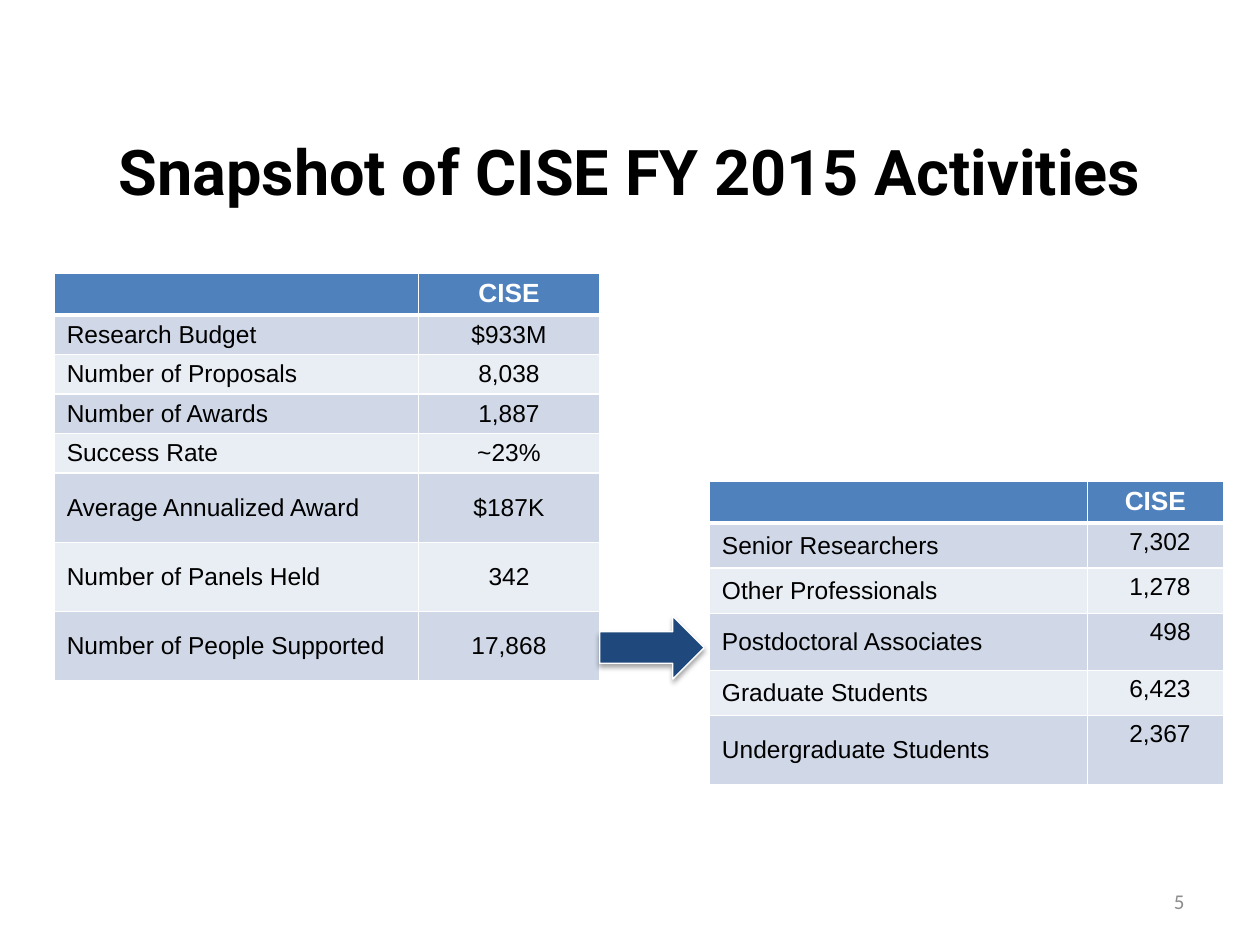
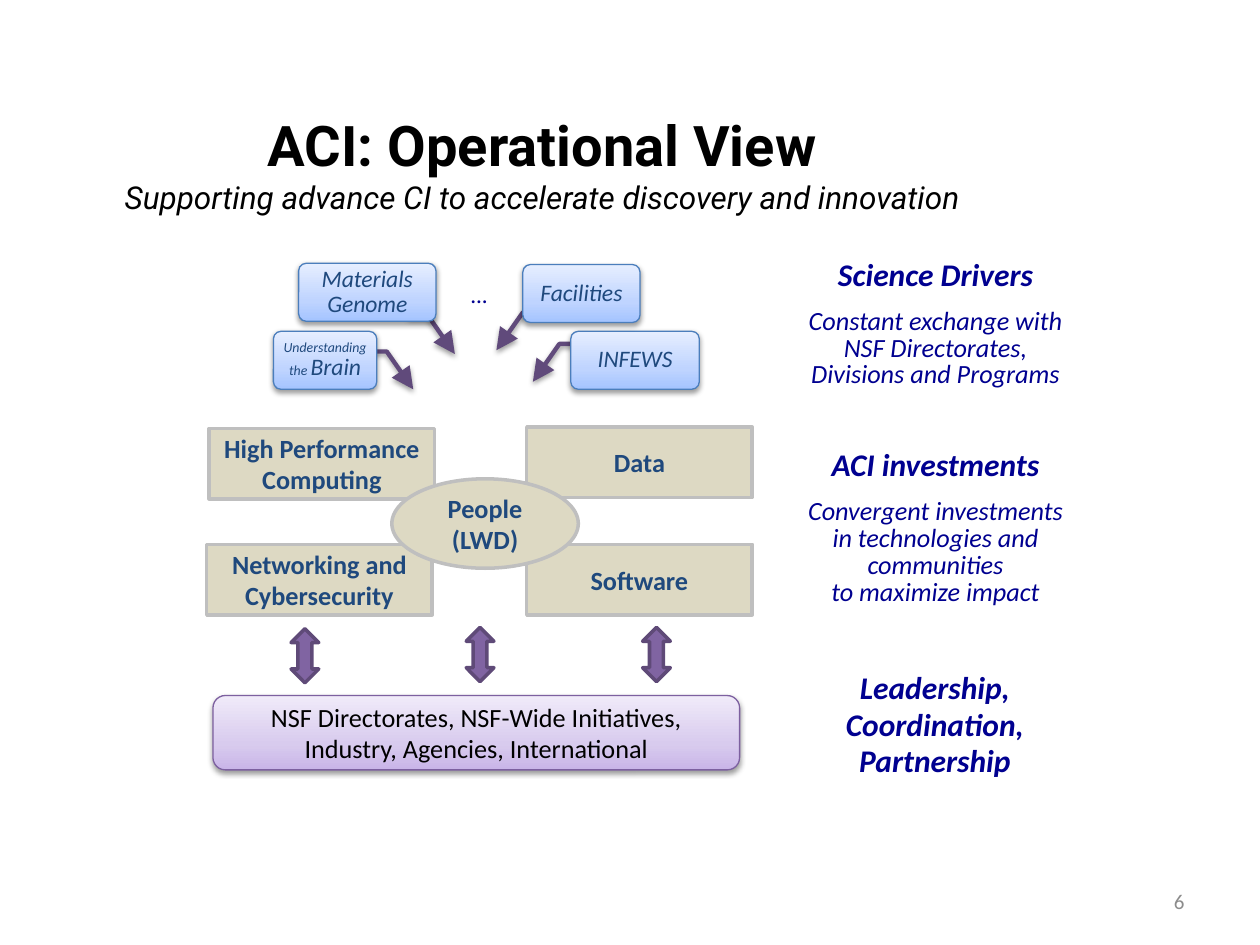
from copy import deepcopy

from lxml import etree
from pptx import Presentation
from pptx.dml.color import RGBColor
from pptx.enum.shapes import MSO_SHAPE
from pptx.enum.text import MSO_ANCHOR, MSO_AUTO_SIZE, PP_ALIGN
from pptx.oxml.ns import qn
from pptx.util import Pt

PX = 9144
SLIDE_WIDTH, SLIDE_HEIGHT = 1000, 750
TITLE_ONLY = 5

LEFT, CENTER, RIGHT = PP_ALIGN.LEFT, PP_ALIGN.CENTER, PP_ALIGN.RIGHT
TOP, MIDDLE = MSO_ANCHOR.TOP, MSO_ANCHOR.MIDDLE
NO_AUTOFIT = MSO_AUTO_SIZE.NONE
RECTANGLE, ROUNDED, OVAL = MSO_SHAPE.RECTANGLE, MSO_SHAPE.ROUNDED_RECTANGLE, MSO_SHAPE.OVAL
RIGHT_ARROW, UP_DOWN_ARROW = MSO_SHAPE.RIGHT_ARROW, MSO_SHAPE.UP_DOWN_ARROW

BLACK = RGBColor(0x00, 0x00, 0x00)
WHITE = RGBColor(0xFF, 0xFF, 0xFF)
GRAY = RGBColor(0x8C, 0x8C, 0x8C)
HEADER_BLUE = RGBColor(0x4F, 0x81, 0xBD)
BANDS = (RGBColor(0xD0, 0xD8, 0xE8), RGBColor(0xE9, 0xED, 0xF4))
NAVY = RGBColor(0x1F, 0x49, 0x7D)
DEEP_BLUE = RGBColor(0x00, 0x00, 0x90)
DRIVER_EDGE = RGBColor(0x4B, 0x7E, 0xBC)
DRIVER_FADE = ((0, "A4C4FF"), (35, "BFD4FF"), (100, "E6EEFF"))
PARTNER_EDGE = RGBColor(0x7D, 0x60, 0xA0)
PARTNER_FADE = ((0, "C9B5E8"), (35, "D8CBEE"), (100, "F0EAF9"))
PURPLE = RGBColor(0x80, 0x64, 0xA2)
DARK_PURPLE = RGBColor(0x5F, 0x4A, 0x78)
BENT_PURPLE = RGBColor(0x60, 0x4A, 0x7B)
TAN = RGBColor(0xDD, 0xD9, 0xC3)
SILVER = RGBColor(0xBF, 0xBF, 0xBF)

ACTIVITIES = (
    ("Research Budget", "$933M"),
    ("Number of Proposals", "8,038"),
    ("Number of Awards", "1,887"),
    ("Success Rate", "~23%"),
    ("Average Annualized Award", "$187K"),
    ("Number of Panels Held", "342"),
    ("Number of People Supported", "17,868"),
)
PEOPLE = (
    ("Senior Researchers", "7,302"),
    ("Other Professionals", "1,278"),
    ("Postdoctoral Associates", "498"),
    ("Graduate Students", "6,423"),
    ("Undergraduate Students", "2,367"),
)
DRIVERS = (
    ((453, 263, 102, 46), "INFEWS"),
    ((415, 210, 93, 46), "Facilities"),
    ((237, 209, 109, 46), "Materials Genome"),
    ((217, 263, 82, 46), (("Understanding the ", {"size": 7.9}), ("Brain", {}))),
)
DRIVER_ARROWS = ((291, 279, 1), (460, 273, -1), (431, 248, -1), (324, 251, 1))
INVESTMENTS = (
    ((166, 340), "High Performance\nComputing"),
    ((418, 339), "Data"),
    ((164, 432), "Networking and\nCybersecurity"),
    ((418, 432), "Software"),
)
EXCHANGE_ARROWS = ((231, 499), (370, 498), (510, 498))


def emu(box):
    """Turn px lengths into EMU."""
    return [length * PX for length in box]


def write(frame, *paragraphs, size=15, font="Calibri", color=BLACK, bold=False, italic=False,
          align=CENTER, anchor=MIDDLE, line=None, before=None, wrap=True):
    """Fill a text frame; a paragraph is a string or (text, changes) pairs."""
    frame.word_wrap = wrap
    frame.vertical_anchor = anchor
    for index, content in enumerate(paragraphs):
        paragraph = frame.paragraphs[0] if index == 0 else frame.add_paragraph()
        paragraph.alignment = align
        if line is not None:
            paragraph.line_spacing = line
        if before is not None:
            paragraph.space_before = Pt(before)
        for text, changes in ((content, {}),) if isinstance(content, str) else content:
            look = {"size": size, "bold": bold, "italic": italic, **changes}
            for row, words in enumerate(text.split("\n")):
                if row:
                    line_break = paragraph._p.add_br()
                    line_break.append(deepcopy(run._r.rPr))
                if not words:
                    continue
                run = paragraph.add_run()
                run.text = words
                run.font.name = font
                run.font.size = Pt(look["size"])
                run.font.bold = look["bold"]
                run.font.italic = look["italic"]
                run.font.color.rgb = color


def add_text(slide, box, *paragraphs, **look):
    """Add a text box."""
    write(slide.shapes.add_textbox(*emu(box)).text_frame, *paragraphs, **look)


def add_slide(deck, number, title_box, *title, **look):
    """Add a slide with its title and number."""
    slide = deck.slides.add_slide(deck.slide_layouts[TITLE_ONLY])
    heading = slide.shapes.title
    heading.left, heading.top, heading.width, heading.height = emu(title_box)
    heading.text_frame.auto_size = NO_AUTOFIT
    write(heading.text_frame, *title, font="Roboto", bold=True, **look)
    add_text(slide, (717, 695, 233, 40), str(number), size=12, color=GRAY, align=RIGHT)
    return slide


def cast_shadow(shape, distance=1.6, opacity=38):
    """Give a shape a soft shadow straight below it."""
    effects = shape._element.spPr.find(qn("a:effectLst"))
    shadow = etree.SubElement(effects, qn("a:outerShdw"), blurRad=str(Pt(3.1)),
                              dist=str(Pt(distance)), dir="5400000", rotWithShape="0")
    black = etree.SubElement(shadow, qn("a:srgbClr"), val="000000")
    etree.SubElement(black, qn("a:alpha"), val=str(opacity * 1000))


def fade(shape, stops):
    """Fill a shape with a gradient that rises from the bottom."""
    shape.fill.gradient()
    shape.fill.gradient_angle = 90
    stop_list = shape._element.spPr.find(".//" + qn("a:gsLst"))
    stop_list.clear()
    for position, color in stops:
        stop = etree.SubElement(stop_list, qn("a:gs"), pos=str(position * 1000))
        etree.SubElement(stop, qn("a:srgbClr"), val=color)


def add_block(slide, kind, box, fill, edge, weight):
    """Add a preset shape; a tuple fill holds gradient stops."""
    block = slide.shapes.add_shape(kind, *emu(box))
    if isinstance(fill, RGBColor):
        block.fill.solid()
        block.fill.fore_color.rgb = fill
    else:
        fade(block, fill)
    block.line.color.rgb = edge
    block.line.width = Pt(weight)
    block.shadow.inherit = False
    return block


def add_bent_arrow(slide, x, y, side):
    """Add an arrow that runs level, then down to the given side."""
    builder = slide.shapes.build_freeform(x, y, scale=PX)
    builder.add_line_segments([(x + 16 * side, y), (x + 37 * side, y + 30)], close=False)
    arrow = builder.convert_to_shape()
    arrow.fill.background()
    arrow.line.color.rgb = BENT_PURPLE
    arrow.line.width = Pt(2.5)
    etree.SubElement(arrow._element.spPr.find(qn("a:ln")), qn("a:tailEnd"),
                     type="triangle", w="lg", len="lg")
    arrow.shadow.inherit = False
    cast_shadow(arrow)


def style_cell(cell, fill, bottom=1):
    """Set a cell's margins, white borders and fill."""
    cell.margin_left = cell.margin_right = 10 * PX
    cell.margin_top = cell.margin_bottom = 4 * PX
    properties = cell._tc.get_or_add_tcPr()
    for side, weight in (("L", 1), ("R", 1), ("T", 1), ("B", bottom)):
        border = etree.SubElement(properties, qn("a:ln" + side), w=str(Pt(weight)))
        paint = etree.SubElement(border, qn("a:solidFill"))
        etree.SubElement(paint, qn("a:srgbClr"), val=str(WHITE))
    cell.fill.solid()
    cell.fill.fore_color.rgb = fill


def add_figures(slide, left, top, widths, heights, rows, value_margin=10, **value_look):
    """Add a table of labels and CISE figures."""
    box = emu((left, top, sum(widths), sum(heights)))
    table = slide.shapes.add_table(len(heights), len(widths), *box).table
    for column, width in zip(table.columns, widths):
        column.width = width * PX
    for row, height in zip(table.rows, heights):
        row.height = height * PX
    corner, heading = table.cell(0, 0), table.cell(0, 1)
    for cell in (corner, heading):
        style_cell(cell, HEADER_BLUE, bottom=3)
    corner.text_frame.paragraphs[0]._p.get_or_add_endParaRPr().set("sz", "1500")
    write_cell(heading, "CISE", size=15, color=WHITE, bold=True, anchor=TOP)
    for index, (label, value) in enumerate(rows):
        label_cell, value_cell = table.cell(index + 1, 0), table.cell(index + 1, 1)
        for cell in (label_cell, value_cell):
            style_cell(cell, BANDS[index % 2])
        write_cell(label_cell, label, align=LEFT)
        write_cell(value_cell, value, **value_look)
        value_cell.margin_right = value_margin * PX


def write_cell(cell, text, anchor=MIDDLE, size=14, **look):
    """Write Arial text into a table cell."""
    write(cell.text_frame, text, font="Arial", size=size, **look)
    cell.vertical_anchor = anchor


def build_snapshot(deck):
    """Build the slide of yearly figures."""
    slide = add_slide(deck, 5, (50, 88, 900, 94), "Snapshot of CISE FY 2015 Activities", size=36)
    add_figures(slide, 563, 382, (300, 108), (33, 36, 36, 45, 36, 55), PEOPLE,
                value_margin=26, align=RIGHT, anchor=TOP)
    add_figures(slide, 43, 217, (289, 144), (33, 31, 31, 31, 31, 55, 55, 55), ACTIVITIES)
    cast_shadow(add_block(slide, RIGHT_ARROW, (476, 489, 83, 50), NAVY, WHITE, 0.75), 1.8, 35)


def build_operations(deck):
    """Build the slide of drivers, investments and partners."""
    slide = add_slide(
        deck, 6, (73, 73, 715, 113),
        (("ACI: Operational View\n", {}),
         ("Supporting advance CI to accelerate discovery and innovation",
          {"size": 18, "bold": False, "italic": True})), size=32)

    partners = add_block(slide, ROUNDED, (169, 552, 418, 59), PARTNER_FADE, PARTNER_EDGE, 0.75)
    cast_shadow(partners)
    write(partners.text_frame,
          "NSF Directorates, NSF-Wide Initiatives,\nIndustry, Agencies, International")
    for x, y in EXCHANGE_ARROWS:
        add_block(slide, UP_DOWN_ARROW, (x, y, 22, 43), PURPLE, DARK_PURPLE, 2)

    for x, y, side in DRIVER_ARROWS:
        add_bent_arrow(slide, x, y, side)
    for box, name in DRIVERS:
        driver = add_block(slide, ROUNDED, box, DRIVER_FADE, DRIVER_EDGE, 0.75)
        driver.adjustments[0] = 0.13
        cast_shadow(driver)
        frame = driver.text_frame
        frame.margin_left = frame.margin_right = 4 * PX
        frame.margin_top = frame.margin_bottom = 5 * PX
        write(frame, name, size=13.5, color=NAVY, italic=True, line=0.9)
    add_text(slide, (364, 217, 33, 33), "…", size=13.5, color=DEEP_BLUE, italic=True,
             anchor=TOP, wrap=False)

    for corner, name in INVESTMENTS:
        investment = add_block(slide, RECTANGLE, (*corner, 179, 56), TAN, SILVER, 2)
        write(investment.text_frame, name, color=NAVY, bold=True)
    people = add_block(slide, OVAL, (311, 380, 148, 71), TAN, SILVER, 2)
    write(people.text_frame, "People", "(LWD)", color=NAVY, bold=True)

    note = {"size": 18, "color": DEEP_BLUE, "bold": True, "italic": True, "anchor": TOP}
    detail = {"size": 15, "bold": False}
    for top, height, heading, text in (
        (206, 107, "Science Drivers",
         "Constant exchange with NSF Directorates, Divisions and Programs"),
        (357, 128, "ACI investments",
         "Convergent investments in technologies and communities\nto maximize impact"),
    ):
        add_text(slide, (625, top, 235, height), heading, ((text, detail),),
                 line=Pt(15.4), before=9, **note)
    add_text(slide, (657, 527, 170, 98), "Leadership,", "Coordination, Partnership",
             line=Pt(20.6), **note)


def main():
    """Build and save the deck."""
    deck = Presentation()
    deck.slide_width, deck.slide_height = emu((SLIDE_WIDTH, SLIDE_HEIGHT))
    build_snapshot(deck)
    build_operations(deck)
    deck.save("out.pptx")


if __name__ == "__main__":
    main()
